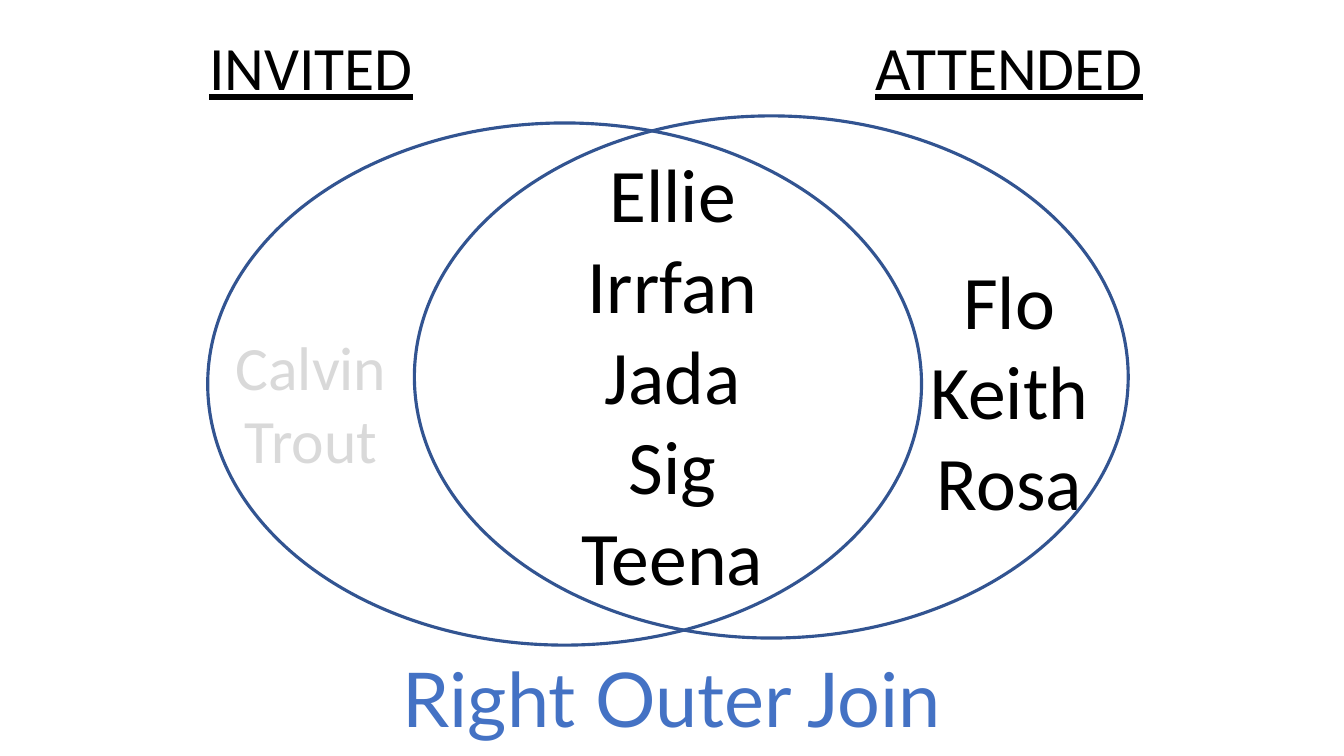
from pptx import Presentation
from pptx.dml.color import RGBColor
from pptx.enum.shapes import MSO_SHAPE as Shape
from pptx.enum.text import MSO_ANCHOR as Anchor, MSO_AUTO_SIZE as Fit, PP_ALIGN as Align
from pptx.util import Inches, Pt

BLACK = RGBColor(0x00, 0x00, 0x00)
GREY = RGBColor(0xD9, 0xD9, 0xD9)
BLUE = RGBColor(0x44, 0x72, 0xC4)
NAVY = RGBColor(0x32, 0x54, 0x91)
HEAD, BIG = 44, 54
LINE = HEAD * 1.22  # height of one heading line, in points


class Venn:
    font = "Calibri"

    def __init__(self, slide):
        self.slide = slide

    def style(self, para, size, color, font=None, under=False):
        para.alignment = Align.CENTER
        for run in para.runs:
            face = run.font
            face.name = font or self.font
            face.size = Pt(size)
            face.color.rgb = color
            face.underline = under

    def title(self, text, x, y, w, h):
        box = self.slide.shapes.title
        box.left, box.top, box.width, box.height = map(Inches, (x, y, w, h))
        frame = box.text_frame
        frame.text = text
        frame.word_wrap = False
        frame.auto_size = Fit.SHAPE_TO_FIT_TEXT
        frame.vertical_anchor = Anchor.TOP
        self.style(frame.paragraphs[0], BIG, BLUE, "Lato")

    def names(self, names, x, y, w, h, size=BIG, color=BLACK, head=None, gap=0):
        """Stack names, under a heading and a gap of some lines if given."""
        box = self.slide.shapes.add_textbox(*map(Inches, (x, y, w, h)))
        frame = box.text_frame
        frame.text = "\n".join([head, *names] if head else names)
        frame.word_wrap = False
        frame.auto_size = Fit.SHAPE_TO_FIT_TEXT
        for para in frame.paragraphs:
            self.style(para, size, color)
        if head:
            self.style(frame.paragraphs[0], HEAD, BLACK, under=True)
            frame.paragraphs[1].space_before = Pt(round(gap * LINE, 1))

    def ring(self, x, y, w=7.08, h=5.18):
        oval = self.slide.shapes.add_shape(Shape.OVAL, *map(Inches, (x, y, w, h)))
        oval.shadow.inherit = False
        oval.fill.background()
        oval.line.color.rgb = NAVY
        oval.line.width = Pt(2.25)


def main():
    deck = Presentation()
    deck.slide_width, deck.slide_height = Inches(13.33), Inches(7.5)
    venn = Venn(deck.slides.add_slide(deck.slide_layouts[5]))
    venn.title("Right Outer Join", 3.2, 6.42, 6.93, 1.01)
    venn.names(["Flo", "Keith", "Rosa"], 8.57, 0.24, 2.88, 5.05,
               head="ATTENDED", gap=2)
    venn.names(["Calvin", "Trout"], 1.96, 0.24, 2.25, 4.54, HEAD, GREY,
               head="INVITED", gap=3)
    venn.names(["Ellie", "Irrfan", "Jada", "Sig", "Teena"], 5.66, 1.41, 2.02, 4.64)
    venn.ring(2.06, 1.22)
    venn.ring(4.11, 1.15)
    deck.save("out.pptx")


if __name__ == "__main__":
    main()
